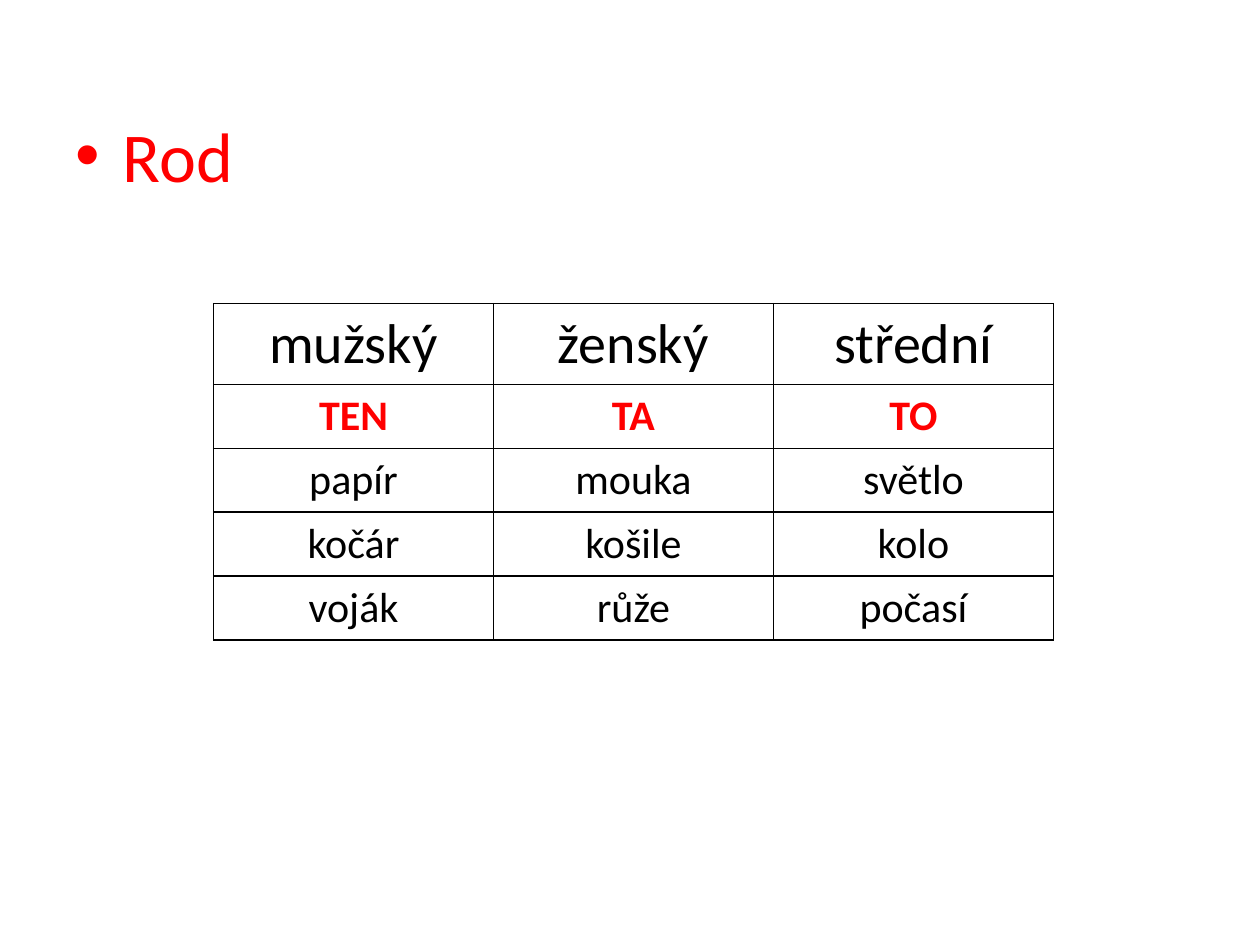
from dataclasses import dataclass

from lxml.etree import SubElement
from pptx import Presentation
from pptx.dml.color import RGBColor
from pptx.enum.text import PP_ALIGN
from pptx.oxml.ns import qn
from pptx.util import Pt


@dataclass(frozen=True)
class Theme:
    font: str = "Calibri"
    black: RGBColor = RGBColor(0, 0, 0)
    red: RGBColor = RGBColor(255, 0, 0)
    heading: int = 40
    header: int = 32
    body: int = 24


theme = Theme()


def style(para, size, color, bold=False):
    para.font.name = theme.font
    para.font.size = Pt(size)
    para.font.color.rgb = color
    para.font.bold = bold


def add_borders(cell):
    properties = cell._tc.get_or_add_tcPr()
    for position, side in enumerate(("lnL", "lnR", "lnT", "lnB")):
        line = properties.makeelement(qn(f"a:{side}"), {"w": str(Pt(1))})
        fill = SubElement(line, qn("a:solidFill"))
        SubElement(fill, qn("a:srgbClr"), val=str(theme.black))
        properties.insert(position, line)


# Page
deck = Presentation()
deck.slide_width, deck.slide_height = Pt(720), Pt(540)
page = deck.slides.add_slide(deck.slide_layouts[6])

# Bulleted heading
box = page.shapes.add_textbox(Pt(36), Pt(60.5), Pt(648), Pt(422))
box.text_frame.word_wrap = True
para = box.text_frame.paragraphs[0]
para.text = "Rod"
style(para, theme.heading, theme.red)
layout = para._p.get_or_add_pPr()
layout.set("marL", str(Pt(27)))
layout.set("indent", str(Pt(-27)))
spacing = layout.makeelement(qn("a:spcBef"), {})
SubElement(spacing, qn("a:spcPct"), val="20000")
bullet_font = layout.makeelement(qn("a:buFont"), {"typeface": "Arial"})
bullet = layout.makeelement(qn("a:buChar"), {"char": "•"})
for position, element in enumerate((spacing, bullet_font, bullet)):
    layout.insert(position, element)

# Gender table
genders = [
    ("mužský", "ženský", "střední"),
    ("TEN", "TA", "TO"),
    ("papír", "mouka", "světlo"),
    ("kočár", "košile", "kolo"),
    ("voják", "růže", "počasí"),
]
row_styles = [
    (theme.header, theme.black, False),
    (theme.body, theme.red, True),
] + [(theme.body, theme.black, False)] * 3
row_heights = [46.25] + [36.5] * 4

table = page.shapes.add_table(
    len(genders), 3, Pt(122), Pt(173.5), Pt(480), Pt(sum(row_heights))
).table
table.first_row = False
table.horz_banding = False
for column in table.columns:
    column.width = Pt(160)
for row, words, row_style, height in zip(table.rows, genders, row_styles, row_heights):
    row.height = Pt(height)
    for cell, word in zip(row.cells, words):
        cell.fill.background()
        add_borders(cell)
        para = cell.text_frame.paragraphs[0]
        para.text = word
        para.alignment = PP_ALIGN.CENTER
        style(para, *row_style)

deck.save("out.pptx")
